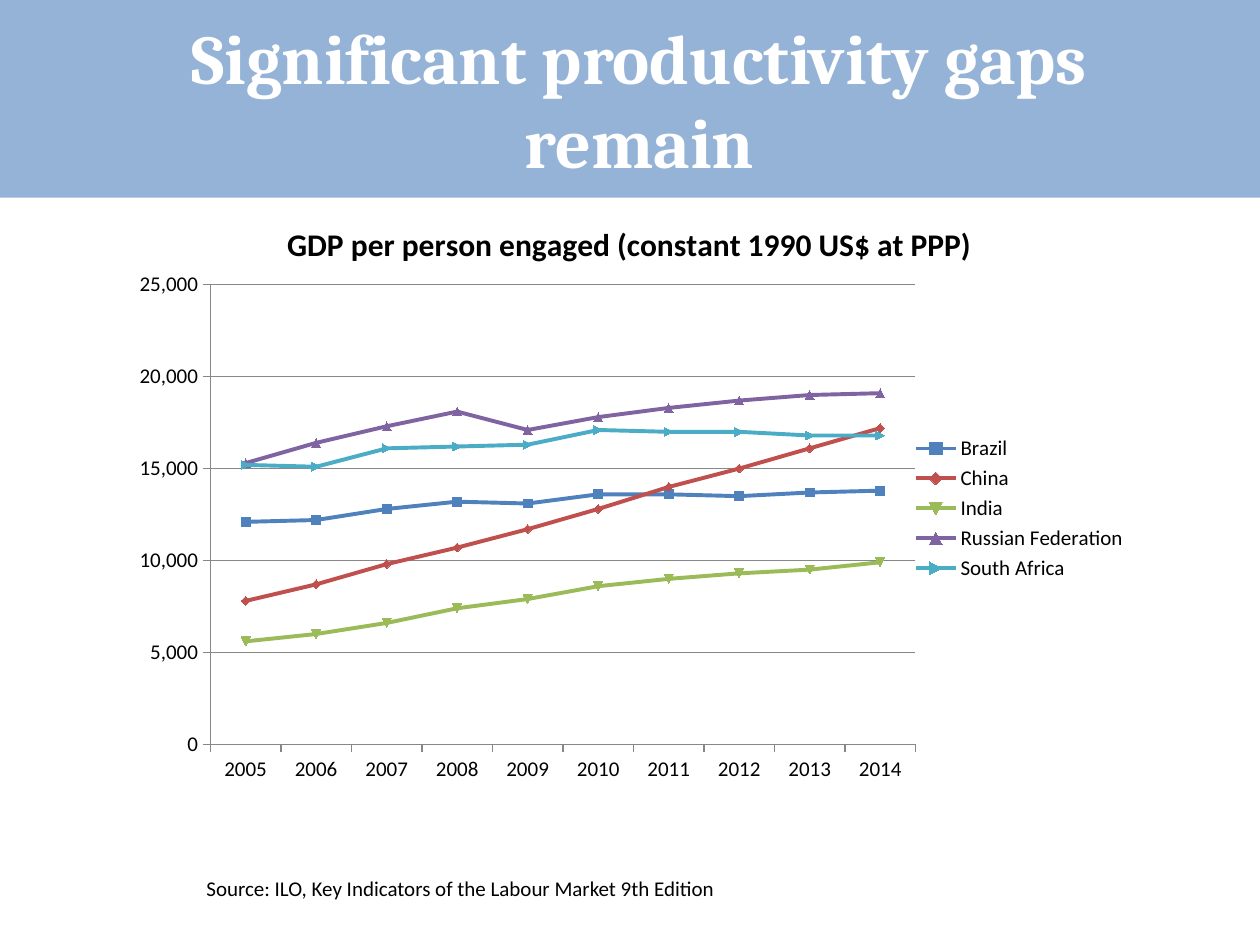
from dataclasses import dataclass

import pptx
import pptx.chart.data
import pptx.dml.color
import pptx.enum.chart
import pptx.enum.shapes
import pptx.enum.text
import pptx.oxml
import pptx.oxml.ns
import pptx.util

PX = 9144


@dataclass(frozen=True)
class Theme:
    band: str = "95B3D7"
    white: str = "FFFFFF"
    ink: str = "000000"
    rule: str = "878787"
    series: tuple = ("4F81BD", "C0504D", "9BBB59", "8064A2", "4BACC6")
    head_font: str = "Cambria"
    body_font: str = "Calibri"
    head: int = 40
    chart_title: int = 18
    body: int = 12


THEME = Theme()
YEARS = [str(year) for year in range(2005, 2015)]
GDP = {
    "Brazil": (12100, 12200, 12800, 13200, 13100, 13600, 13600, 13500, 13700, 13800),
    "China": (7800, 8700, 9800, 10700, 11700, 12800, 14000, 15000, 16100, 17200),
    "India": (5600, 6000, 6600, 7400, 7900, 8600, 9000, 9300, 9500, 9900),
    "Russian Federation": (15300, 16400, 17300, 18100, 17100, 17800, 18300, 18700, 19000, 19100),
    "South Africa": (15200, 15100, 16100, 16200, 16300, 17100, 17000, 17000, 16800, 16800),
}


def px(*values):
    return [pptx.util.Emu(v * PX) for v in values]


def rgb(value):
    return pptx.dml.color.RGBColor.from_string(value)


def style_font(font, size, color=THEME.ink, name=THEME.body_font, bold=False):
    font.size = pptx.util.Pt(size)
    font.name = name
    font.bold = bold
    font.color.rgb = rgb(color)


def add_text(s, box, text, align="LEFT", anchor="TOP", **font):
    tf = s.shapes.add_textbox(*px(*box)).text_frame
    tf.word_wrap = True
    tf.vertical_anchor = pptx.enum.text.MSO_ANCHOR[anchor]
    p = tf.paragraphs[0]
    p.alignment = pptx.enum.text.PP_ALIGN[align]
    r = p.add_run()
    r.text = text
    style_font(r.font, **font)


def add_band(s, box, color):
    sp = s.shapes.add_shape(pptx.enum.shapes.MSO_SHAPE.RECTANGLE, *px(*box))
    sp.shadow.inherit = False
    sp.fill.solid()
    sp.fill.fore_color.rgb = rgb(color)
    sp.line.fill.background()


def place_plot(chart, x, y, w, h):
    plot_area = chart.plots[0]._element.getparent()
    for old in plot_area.findall(pptx.oxml.ns.qn("c:layout")):
        plot_area.remove(old)
    places = "".join(f'<c:{k} val="{v}"/>' for k, v in zip("xywh", (x, y, w, h)))
    plot_area.insert(0, pptx.oxml.parse_xml(
        f'<c:layout {pptx.oxml.ns.nsdecls("c")}><c:manualLayout>'
        '<c:layoutTarget val="inner"/><c:xMode val="edge"/><c:yMode val="edge"/>'
        f'{places}</c:manualLayout></c:layout>'))


def style_line(line, color, width):
    line.color.rgb = rgb(color)
    line.width = pptx.util.Pt(width)


def style_axes(chart):
    for axis in (chart.category_axis, chart.value_axis):
        axis.major_tick_mark = pptx.enum.chart.XL_TICK_MARK.OUTSIDE
        axis.minor_tick_mark = pptx.enum.chart.XL_TICK_MARK.NONE
        style_line(axis.format.line, THEME.rule, 0.75)
    axis = chart.value_axis
    axis.minimum_scale, axis.maximum_scale, axis.major_unit = 0, 25000, 5000
    axis.has_major_gridlines = True
    style_line(axis.major_gridlines.format.line, THEME.rule, 0.75)
    axis.tick_labels.number_format = "#,##0"
    axis.tick_labels.number_format_is_linked = False


def add_line_chart(s, box, title):
    data = pptx.chart.data.CategoryChartData(number_format="#,##0")
    data.categories = YEARS
    for name, values in GDP.items():
        data.add_series(name, values)
    kind = pptx.enum.chart.XL_CHART_TYPE.LINE_MARKERS
    chart = s.shapes.add_chart(kind, *px(*box), data).chart
    style_font(chart.font, THEME.body)
    chart.has_title = True
    p = chart.chart_title.text_frame.paragraphs[0]
    r = p.add_run()
    r.text = title
    style_font(r.font, THEME.chart_title, bold=True)
    chart.chart_title.include_in_layout = False
    chart.has_legend = True
    chart.legend.position = pptx.enum.chart.XL_LEGEND_POSITION.RIGHT
    chart.legend.include_in_layout = False
    place_plot(chart, 0.09, 0.14, 0.69, 0.74)
    style_axes(chart)
    chart.plots[0].vary_by_categories = False
    for series, color in zip(chart.plots[0].series, THEME.series):
        series.smooth = False
        style_line(series.format.line, color, 2.25)
        series.marker.format.fill.solid()
        series.marker.format.fill.fore_color.rgb = rgb(color)
        style_line(series.marker.format.line, color, 0.75)


def main():
    prs = pptx.Presentation()
    prs.slide_width, prs.slide_height = px(1000, 750)
    s = prs.slides.add_slide(prs.slide_layouts[6])
    add_band(s, (0, 0, 1000, 157), THEME.band)
    add_text(s, (106, 6, 803, 145), "Significant productivity gaps remain",
             align="CENTER", anchor="MIDDLE", size=THEME.head,
             color=THEME.white, name=THEME.head_font, bold=True)
    add_text(s, (154, 690, 646, 30),
             "Source: ILO, Key Indicators of the Labour Market 9th Edition",
             size=THEME.body)
    add_line_chart(s, (94, 157, 811, 493),
                   "GDP per person engaged (constant 1990 US$ at PPP)")
    prs.save("out.pptx")


if __name__ == "__main__":
    main()
